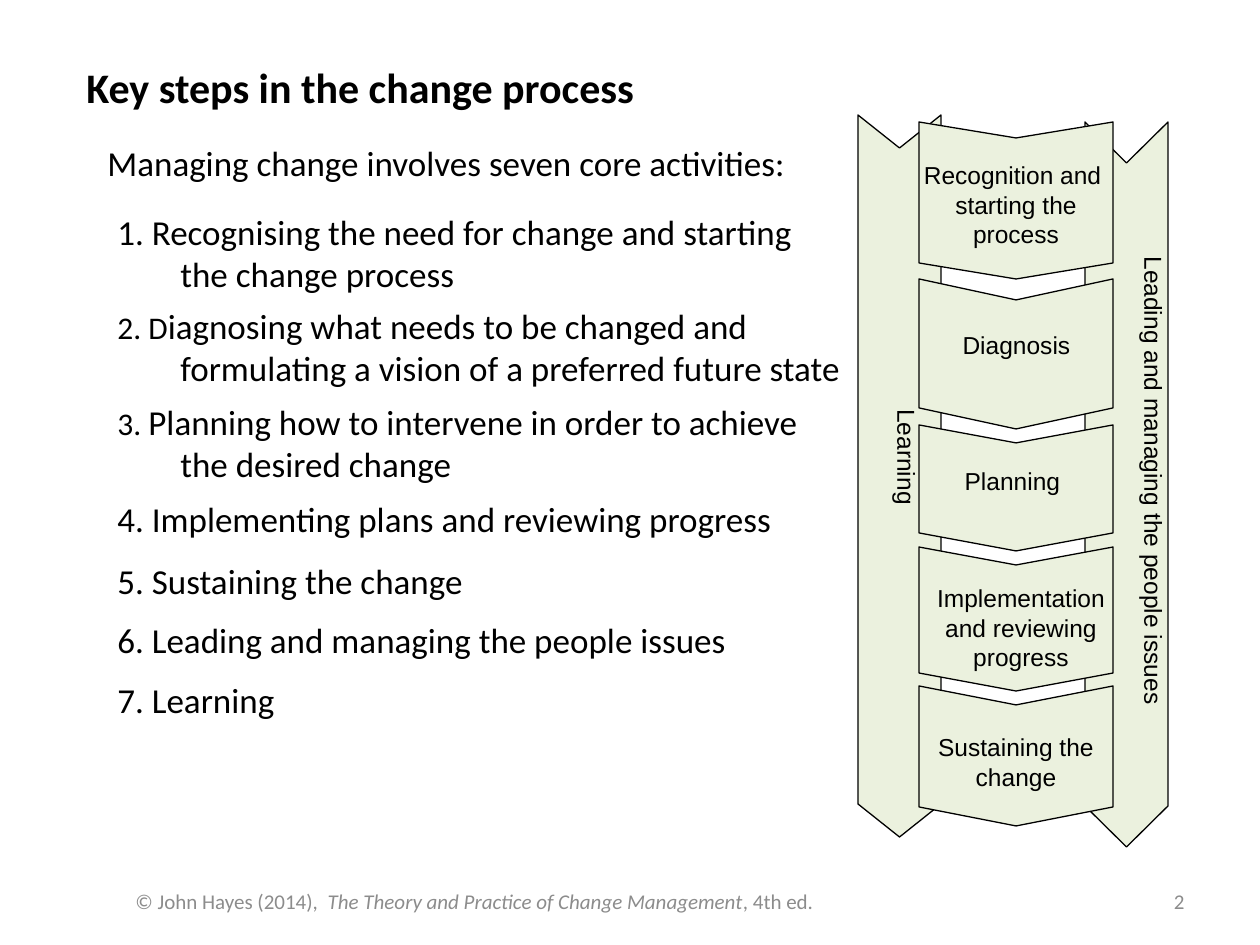
from pptx import Presentation
from pptx.dml.color import RGBColor
from pptx.enum.shapes import MSO_SHAPE as SHAPE
from pptx.enum.text import MSO_ANCHOR as ANCHOR, PP_ALIGN as ALIGN
from pptx.util import Emu, Pt

SCALE = 914400 / 126


def px(n):
    return Emu(round(n * SCALE))


def rgb(value):
    return RGBColor.from_string(value)


def write(p, text, size=20, font="Calibri", color="000000", bold=False, italic=False):
    r = p.add_run()
    r.text = text
    r.font.size = Pt(size)
    r.font.name = font
    r.font.color.rgb = rgb(color)
    r.font.bold = bold
    r.font.italic = italic


class Deck:
    fill, line, gray = "EBF1DE", "000000", "8C8C8C"

    def __init__(self, width, height):
        self.prs = Presentation()
        self.prs.slide_width, self.prs.slide_height = px(width), px(height)
        self.s = self.prs.slides.add_slide(self.prs.slide_layouts[6])

    def text(self, box, *paragraphs, align=ALIGN.LEFT, anchor=ANCHOR.TOP,
             hang=0, vertical=False, **style):
        tf = self.s.shapes.add_textbox(*map(px, box)).text_frame
        tf.word_wrap = True
        tf.vertical_anchor = anchor
        body = tf._txBody.bodyPr
        if vertical:
            body.set("vert", "vert")
        for i, runs in enumerate(paragraphs):
            p = tf.add_paragraph() if i else tf.paragraphs[0]
            p.alignment = align
            if hang:
                pPr = p._p.get_or_add_pPr()
                pPr.set("marL", str(px(hang)))
                pPr.set("indent", str(-px(hang)))
            for text, extra in [(runs, {})] if isinstance(runs, str) else runs:
                write(p, text, **{**style, **extra})

    def label(self, box, *paragraphs, **layout):
        self.text(box, *paragraphs, **{"align": ALIGN.CENTER, "size": 14,
                                       "font": "Arial", **layout})

    def down_chevron(self, x, y, w, h, notch):
        left, top = x + (w - h) / 2, y + (h - w) / 2
        sp = self.s.shapes.add_shape(SHAPE.CHEVRON, px(left), px(top), px(h), px(w))
        sp.rotation = 90
        sp.adjustments[0] = notch / min(w, h)
        sp.shadow.inherit = False
        sp.fill.solid()
        sp.fill.fore_color.rgb = rgb(self.fill)
        sp.line.color.rgb = rgb(self.line)
        sp.line.width = Pt(0.75)


ACTIVITIES = [
    (204, "1. Recognising the need for change and starting the change process"),
    (298, [("2. D", {"size": 18}),
           ("iagnosing what needs to be changed and formulating a vision "
            "of a preferred future state", {})]),
    (394, [("3. ", {"size": 18}),
           ("Planning how to intervene in order to achieve the desired change", {})]),
    (491, "4. Implementing plans and reviewing progress"),
    (553, "5. Sustaining the change"),
    (612, "6. Leading and managing the people issues"),
    (672, "7. Learning"),
]

STEPS = [
    (122, 157, 16, (907, 154, 218, 120), ["Recognition and ", "starting the process"]),
    (279, 150, 21, (927, 324, 179, 59), ["Diagnosis"]),
    (425, 126, 18, (942, 460, 141, 47), ["Planning"]),
    (547, 144, 18, (917, 577, 208, 84), ["Implementation and reviewing progress"]),
    (686, 140, 19, (917, 726, 198, 44), ["Sustaining the change"]),
]


def main():
    deck = Deck(1260, 945)
    deck.text((74, 55, 1091, 63), "Key steps in the change process", size=24, bold=True)
    deck.text((95, 135, 760, 55), "Managing change involves seven core activities:")
    for top, activity in ACTIVITIES:
        deck.text((105, top, 753, 56), activity, hang=63)

    deck.down_chevron(858, 115, 83, 722, 33)
    deck.label((869, 354, 59, 199), " Learning", vertical=True)
    deck.down_chevron(1085, 122, 83, 725, 41)
    deck.label((1116, 244, 59, 507), "Leading and managing the people issues",
               vertical=True, align=ALIGN.LEFT)
    for top, height, notch, box, lines in STEPS:
        deck.down_chevron(919, top, 194, height, notch)
        deck.label(box, *lines)

    footer = {"size": 12, "color": deck.gray, "anchor": ANCHOR.MIDDLE}
    deck.text((903, 876, 294, 50), "2", align=ALIGN.RIGHT, **footer)
    deck.text((123, 876, 963, 50),
              [("© John Hayes (2014),  ", {}),
               ("The Theory and Practice of Change Management", {"italic": True}),
               (", 4th ed.", {})], **footer)
    deck.prs.save("out.pptx")


if __name__ == "__main__":
    main()
